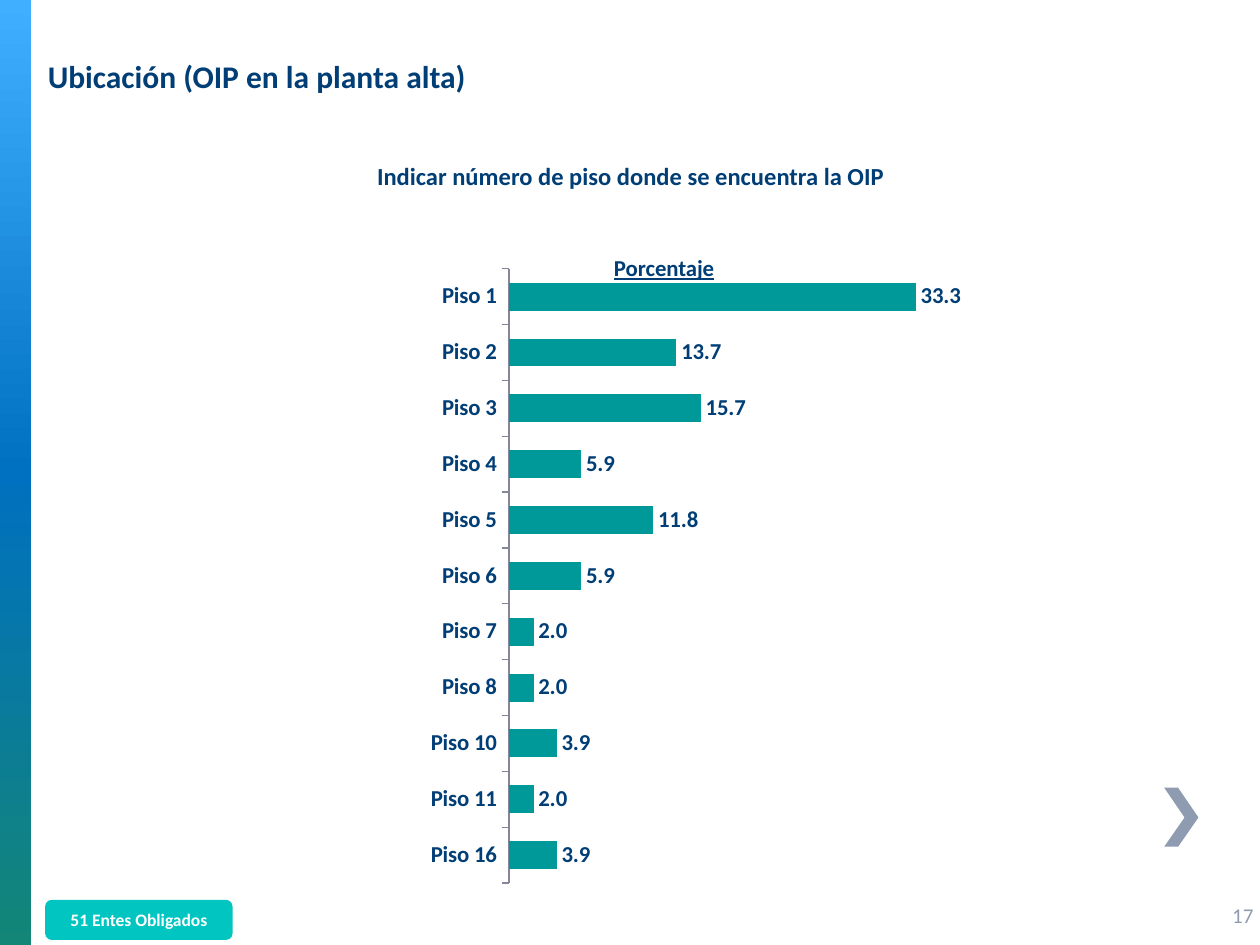
from dataclasses import dataclass

from lxml import etree
from pptx import Presentation
from pptx.chart.data import CategoryChartData
from pptx.dml.color import RGBColor
from pptx.enum.chart import XL_CHART_TYPE, XL_LABEL_POSITION, XL_TICK_LABEL_POSITION, XL_TICK_MARK
from pptx.enum.shapes import MSO_SHAPE
from pptx.enum.text import MSO_ANCHOR, PP_ALIGN
from pptx.oxml import parse_xml
from pptx.oxml.ns import nsdecls, qn
from pptx.util import Cm, Pt

BAR = XL_CHART_TYPE.BAR_CLUSTERED
OUTSIDE_END = XL_LABEL_POSITION.OUTSIDE_END
LABELS_LOW = XL_TICK_LABEL_POSITION.LOW
TICK_OUT, TICK_NONE = XL_TICK_MARK.OUTSIDE, XL_TICK_MARK.NONE
RECTANGLE, ROUNDED = MSO_SHAPE.RECTANGLE, MSO_SHAPE.ROUNDED_RECTANGLE
TOP, MIDDLE = MSO_ANCHOR.TOP, MSO_ANCHOR.MIDDLE
LEFT, CENTER = PP_ALIGN.LEFT, PP_ALIGN.CENTER

NAVY = RGBColor(0x00, 0x3E, 0x75)
TEAL = RGBColor(0x00, 0x99, 0x99)
TURQUOISE = RGBColor(0x00, 0xC5, 0xC0)
GREY = RGBColor(0x8E, 0x9B, 0xB0)
AXIS_GREY = RGBColor(0x86, 0x86, 0x9A)
WHITE = RGBColor(0xFF, 0xFF, 0xFF)
SKY = RGBColor(0x40, 0xAF, 0xFF)
BLUE = RGBColor(0x00, 0x70, 0xC0)
GREEN = RGBColor(0x13, 0x86, 0x77)

FONT = "Calibri"
NUMBER_FORMAT = "###0.0"
SERIES_NAME = "Porcentaje"
FLOORS = {
    "Piso 1": 33.3, "Piso 2": 13.7, "Piso 3": 15.7, "Piso 4": 5.9,
    "Piso 5": 11.8, "Piso 6": 5.9, "Piso 7": 2.0, "Piso 8": 2.0,
    "Piso 10": 3.9, "Piso 11": 2.0, "Piso 16": 3.9,
}
# Hundredths of a centimetre
CHEVRON = [(2375, 1588), (2347, 1588), (2388, 1648), (2347, 1707), (2375, 1707), (2416, 1648)]


@dataclass
class Box:
    left: float
    top: float
    width: float
    height: float

    def lengths(self) -> tuple:
        return Cm(self.left), Cm(self.top), Cm(self.width), Cm(self.height)


@dataclass
class Label:
    text: str
    size: float
    color: RGBColor = NAVY
    bold: bool = True
    align: PP_ALIGN = LEFT
    anchor: MSO_ANCHOR = MIDDLE
    wrap: bool = True


def format_font(font, size: float, color: RGBColor, **values) -> None:
    for name, value in {"name": FONT, "size": Pt(size), **values}.items():
        setattr(font, name, value)
    font.color.rgb = color


def write_label(shape, label: Label) -> None:
    frame = shape.text_frame
    frame.word_wrap = label.wrap
    frame.vertical_anchor = label.anchor
    para = frame.paragraphs[0]
    para.alignment = label.align
    span = para.add_run()
    span.text = label.text
    format_font(span.font, label.size, label.color, bold=label.bold)


def add_label(slide, box: Box, label: Label) -> None:
    write_label(slide.shapes.add_textbox(*box.lengths()), label)


def make_plain(shape, color: RGBColor) -> None:
    shape.shadow.inherit = False
    shape.fill.solid()
    shape.fill.fore_color.rgb = color
    shape.line.fill.background()


def add_side_band(slide, box: Box) -> None:
    band = slide.shapes.add_shape(RECTANGLE, *box.lengths())
    make_plain(band, BLUE)
    stops = "".join(
        f'<a:gs pos="{place * 1000}"><a:srgbClr val="{color}"/></a:gs>'
        for place, color in ((0, SKY), (50, BLUE), (100, GREEN))
    )
    gradient = parse_xml(
        f'<a:gradFill {nsdecls("a")} rotWithShape="1"><a:gsLst>{stops}</a:gsLst>'
        '<a:lin ang="5400000" scaled="0"/></a:gradFill>'
    )
    properties = band._element.spPr
    properties.replace(properties.find(qn("a:solidFill")), gradient)


def add_chevron(slide) -> None:
    builder = slide.shapes.build_freeform(*CHEVRON[0], scale=Cm(0.01))
    builder.add_line_segments(CHEVRON[1:], close=True)
    make_plain(builder.convert_to_shape(), GREY)


def set_layout(parent, position: int, **values) -> None:
    """Place a chart part by fractions of the chart's size."""
    for old in parent.findall(qn("c:layout")):
        parent.remove(old)
    layout = etree.Element(qn("c:layout"))
    manual = etree.SubElement(layout, qn("c:manualLayout"))
    for name, value in values.items():
        etree.SubElement(manual, qn(f"c:{name}")).set("val", str(value))
    parent.insert(position, layout)


def add_floor_chart(slide, box: Box) -> None:
    data = CategoryChartData(number_format=NUMBER_FORMAT)
    data.categories = list(reversed(FLOORS))
    data.add_series(SERIES_NAME, list(reversed(FLOORS.values())))
    chart = slide.shapes.add_chart(BAR, *box.lengths(), data).chart
    chart.has_legend = False
    format_font(chart.font, 13, NAVY, bold=True)

    chart.has_title = True
    title = chart.chart_title
    title.include_in_layout = False
    span = title.text_frame.paragraphs[0].add_run()
    span.text = SERIES_NAME
    format_font(span.font, 13, NAVY, bold=True, underline=True)
    set_layout(title._element, 1, xMode="edge", yMode="edge", x=0.42, y=0.04)
    set_layout(chart._chartSpace.chart.plotArea, 0, layoutTarget="inner",
               xMode="edge", yMode="edge", x=0.273, y=0.068, w=0.625, h=0.868)

    floors, values = chart.category_axis, chart.value_axis
    floors.major_tick_mark = TICK_OUT
    floors.minor_tick_mark = TICK_NONE
    floors.tick_label_position = LABELS_LOW
    floors.format.line.color.rgb = AXIS_GREY
    floors.format.line.width = Pt(0.75)
    values.visible = False
    values.has_major_gridlines = False
    values.minimum_scale, values.maximum_scale = 0, 35

    plot = chart.plots[0]
    plot.gap_width = 100
    plot.vary_by_categories = False
    fill = plot.series[0].format.fill
    fill.solid()
    fill.fore_color.rgb = TEAL
    plot.has_data_labels = True
    labels = plot.data_labels
    label_format = {"show_value": True, "position": OUTSIDE_END,
                    "number_format": NUMBER_FORMAT, "number_format_is_linked": False}
    for name, value in label_format.items():
        setattr(labels, name, value)
    format_font(labels.font, 13, NAVY, bold=True)


def main() -> None:
    deck = Presentation()
    deck.slide_width, deck.slide_height = Cm(25.4), Cm(19.05)
    slide = deck.slides.add_slide(deck.slide_layouts[5])

    add_side_band(slide, Box(0, 0, 0.63, 19.05))
    add_chevron(slide)
    add_label(slide, Box(24.59, 17.93, 1.07, 1.02),
              Label("17", 12, GREY, bold=False, wrap=False))
    add_label(slide, Box(7.14, 3.12, 11.15, 0.86),
              Label("Indicar número de piso donde se encuentra la OIP", 14,
                    align=CENTER, anchor=TOP))
    add_floor_chart(slide, Box(6.5, 4.45, 13.79, 14.27))

    title = slide.shapes.title
    title.left, title.top, title.width, title.height = Box(0.71, 0.33, 23.6, 2.39).lengths()
    write_label(title, Label("Ubicación (OIP en la planta alta)", 18))

    badge = slide.shapes.add_shape(ROUNDED, *Box(0.91, 18.14, 3.78, 0.81).lengths())
    make_plain(badge, TURQUOISE)
    write_label(badge, Label("51 Entes Obligados", 10, WHITE, align=CENTER))

    deck.save("out.pptx")


if __name__ == "__main__":
    main()
